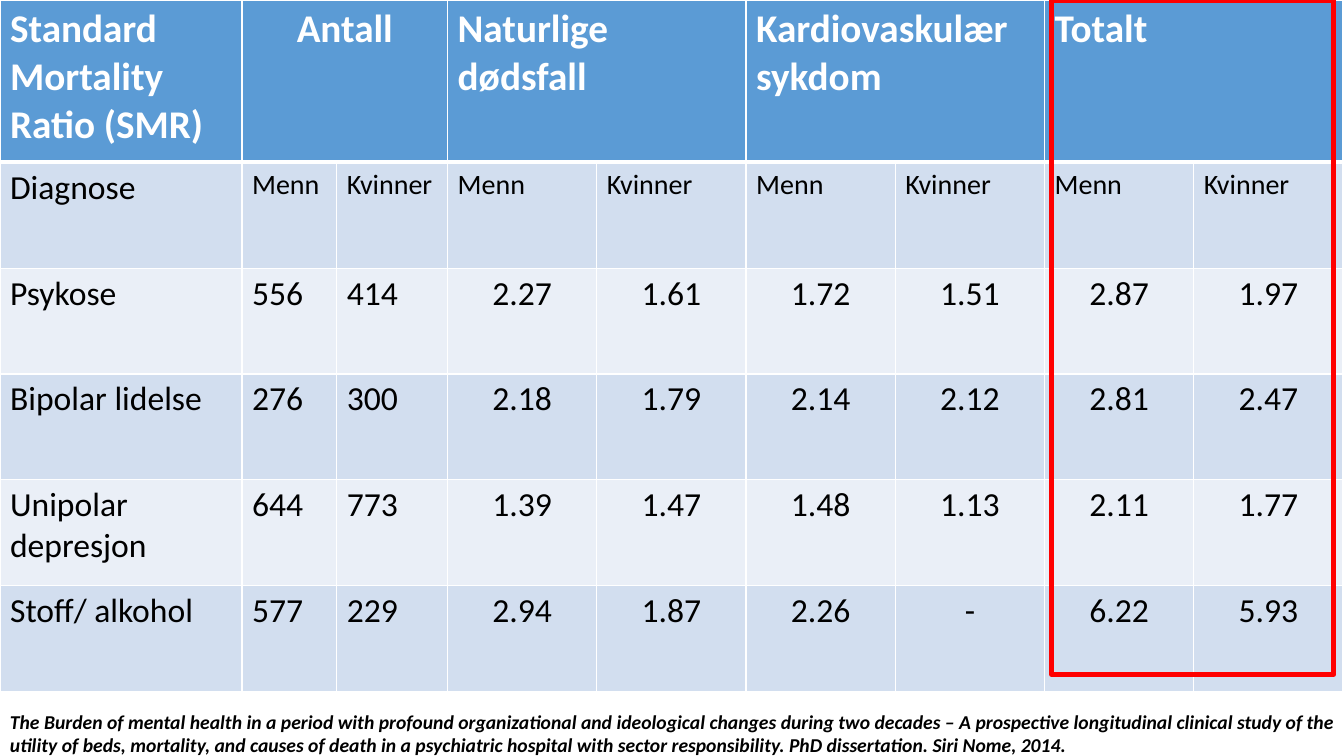
from lxml.etree import SubElement
from pptx import Presentation
from pptx.dml.color import RGBColor
from pptx.enum.shapes import MSO_SHAPE
from pptx.enum.text import PP_ALIGN
from pptx.oxml.ns import qn
from pptx.util import Inches, Pt

FONT = "Calibri"
COLORS = {"header": "5B9BD5", "dark_band": "D2DEEF", "light_band": "EAEFF7",
          "white": "FFFFFF", "text": "000000", "highlight": "FF0000"}

# Table grid in inches
COL_WIDTHS = [2.4, 0.94, 1.1] + [1.48] * 6
ROW_HEIGHTS = [1.61] + [1.05] * 5
FIRST_RATIO_COL = 3

GROUPS = ["Antall", "Naturlige dødsfall", "Kardiovaskulær sykdom", "Totalt"]
ROWS = [
    ["Diagnose"] + ["Menn", "Kvinner"] * len(GROUPS),
    ["Psykose", "556", "414", "2.27", "1.61", "1.72", "1.51", "2.87", "1.97"],
    ["Bipolar lidelse", "276", "300", "2.18", "1.79", "2.14", "2.12", "2.81", "2.47"],
    ["Unipolar depresjon", "644", "773", "1.39", "1.47", "1.48", "1.13", "2.11", "1.77"],
    ["Stoff/ alkohol", "577", "229", "2.94", "1.87", "2.26", "-", "6.22", "5.93"],
]
SOURCE = ("The Burden of mental health in a period with profound organizational and "
          "ideological changes during two decades – A prospective longitudinal clinical "
          "study of the utility of beds, mortality, and causes of death in a psychiatric "
          "hospital with sector responsibility. PhD dissertation. Siri Nome, 2014.")


def rgb(name):
    return RGBColor.from_string(COLORS[name])


def write(tf, text, size, color="text", bold=False, italic=False, align=PP_ALIGN.LEFT):
    tf.text = text
    for p in tf.paragraphs:
        p.alignment = align
        for r in p.runs:
            r.font.name, r.font.size = FONT, Pt(size)
            r.font.bold, r.font.italic = bold, italic
            r.font.color.rgb = rgb(color)


def style_cell(cell, fill, bottom=1):
    """White borders first, then the fill, as the schema orders them."""
    tcPr = cell._tc.get_or_add_tcPr()
    for side, width in (("L", 1), ("R", 1), ("T", 1), ("B", bottom)):
        ln = SubElement(tcPr, qn(f"a:ln{side}"), w=str(Pt(width)))
        SubElement(SubElement(ln, qn("a:solidFill")), qn("a:srgbClr"), val=COLORS["white"])
    cell.fill.solid()
    cell.fill.fore_color.rgb = rgb(fill)


def add_header(table):
    for cell in table.rows[0].cells:
        style_cell(cell, "header", bottom=3)
    write(table.cell(0, 0).text_frame, "Standard\nMortality\nRatio (SMR)", 28, "white", bold=True)
    for i, group in enumerate(GROUPS):
        col = 1 + 2 * i
        cell = table.cell(0, col)
        cell.merge(table.cell(0, col + 1))
        align = PP_ALIGN.CENTER if i == 0 else PP_ALIGN.LEFT
        write(cell.text_frame, group, 28, "white", bold=True, align=align)


def add_body(table):
    for r, row in enumerate(ROWS, start=1):
        for c, text in enumerate(row):
            cell = table.cell(r, c)
            style_cell(cell, "dark_band" if r % 2 else "light_band", bottom=1)
            is_ratio = r > 1 and c >= FIRST_RATIO_COL
            write(cell.text_frame, text, 20 if r == 1 and c else 24,
                  align=PP_ALIGN.CENTER if is_ratio else PP_ALIGN.LEFT)


def add_mortality_table(slide):
    table = slide.shapes.add_table(
        len(ROW_HEIGHTS), len(COL_WIDTHS), 0, 0,
        Inches(sum(COL_WIDTHS)), Inches(sum(ROW_HEIGHTS))).table
    for col, width in zip(table.columns, COL_WIDTHS):
        col.width = Inches(width)
    for row, height in zip(table.rows, ROW_HEIGHTS):
        row.height = Inches(height)
    add_header(table)
    add_body(table)


def add_source(slide):
    tf = slide.shapes.add_textbox(0, Inches(6.99), Inches(13.71), Inches(0.57)).text_frame
    tf.word_wrap = True
    write(tf, SOURCE, 14, bold=True, italic=True)


def add_highlight(slide):
    left = sum(COL_WIDTHS[:-2]) + 0.07
    sp = slide.shapes.add_shape(MSO_SHAPE.RECTANGLE, Inches(left), 0, Inches(2.8), Inches(6.69))
    sp.shadow.inherit = False
    sp.fill.background()
    sp.line.color.rgb = rgb("highlight")
    sp.line.width = Pt(3.75)


def main():
    prs = Presentation()
    prs.slide_width, prs.slide_height = Inches(13.33), Inches(7.5)
    slide = prs.slides.add_slide(prs.slide_layouts[6])
    add_mortality_table(slide)
    add_source(slide)
    add_highlight(slide)  # frame around the totals
    prs.save("out.pptx")


if __name__ == "__main__":
    main()
